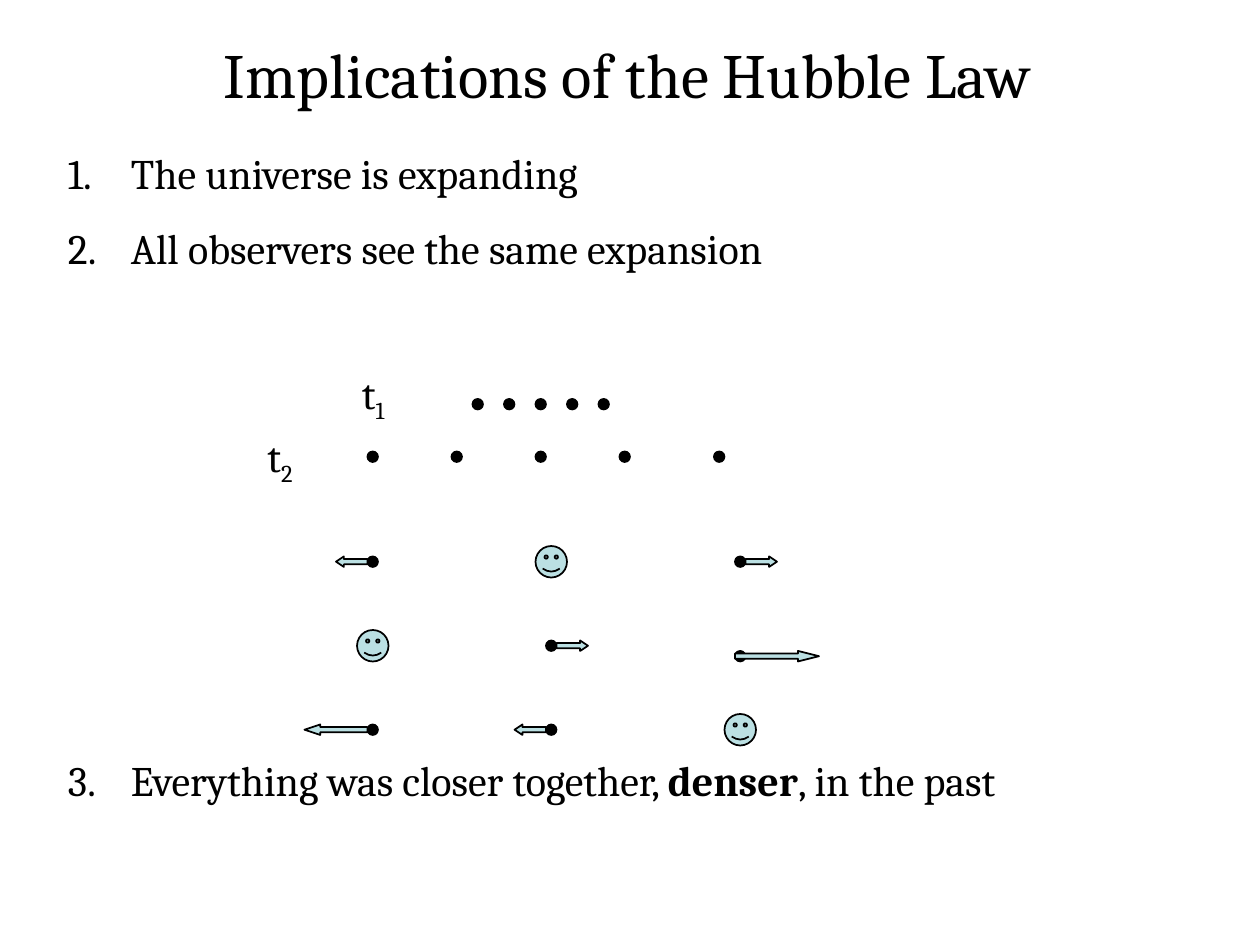
from dataclasses import dataclass

from lxml.etree import SubElement
from pptx import Presentation
from pptx.dml.color import RGBColor
from pptx.enum.shapes import MSO_SHAPE as Preset
from pptx.enum.text import MSO_ANCHOR as Anchor, MSO_AUTO_SIZE as AutoSize, PP_ALIGN as Align
from pptx.oxml.ns import qn
from pptx.util import Cm, Pt


@dataclass(frozen=True)
class Theme:
    """Fonts, sizes and colours of the slide."""
    font: str = "Cambria"
    title_size: int = 36
    body_size: int = 24
    paragraph_gap: float = 14.5
    line_width: int = 1
    ink: RGBColor = RGBColor(0x00, 0x00, 0x00)
    accent: RGBColor = RGBColor(0xBB, 0xE0, 0xE3)


def grid(count):
    """Return a length on a grid of twelve steps to the inch."""
    return Cm(count * 2.54 / 12)


def add_text(paragraph, text, *, font, size, color, bold=False, baseline=None):
    """Add a formatted run to a paragraph."""
    run = paragraph.add_run()
    run.text = text
    run.font.name = font
    run.font.size = Pt(size)
    run.font.color.rgb = color
    run.font.bold = bold
    if baseline is not None:
        run._r.get_or_add_rPr().set("baseline", str(baseline * 1000))


def set_indent(paragraph, left, first=0):
    """Set the left margin and first-line indent of a paragraph."""
    properties = paragraph._p.get_or_add_pPr()
    properties.set("marL", str(Cm(left)))
    properties.set("indent", str(Cm(first)))
    return properties


class SlideBuilder:
    """Holds the theme and the slide being built."""

    def __init__(self, slide, theme):
        """Keep the slide and its theme."""
        self.slide = slide
        self.theme = theme
        self.body_format = dict(font=theme.font, size=theme.body_size, color=theme.ink)

    def frame(self, shape, box, insets, anchor=Anchor.TOP):
        """Place a text shape and return its prepared text frame."""
        shape.left, shape.top, shape.width, shape.height = map(grid, box)
        frame = shape.text_frame
        frame.word_wrap = True
        frame.auto_size = AutoSize.NONE
        frame.vertical_anchor = anchor
        (frame.margin_left, frame.margin_top,
         frame.margin_right, frame.margin_bottom) = map(Cm, insets)
        return frame

    def title(self, text, box):
        """Fill the title placeholder."""
        frame = self.frame(self.slide.shapes.title, box, (0.15, 0.15, 0.35, 0.15), Anchor.MIDDLE)
        paragraph = frame.paragraphs[0]
        paragraph.alignment = Align.CENTER
        set_indent(paragraph, 0.1)
        add_text(paragraph, text, font=self.theme.font,
                 size=self.theme.title_size, color=self.theme.ink)

    def numbered_list(self, items, box):
        """Fill the body placeholder with (space before, runs) items."""
        frame = self.frame(self.slide.placeholders[1], box, (0, 0, 0.1, 0))
        for index, (space, runs) in enumerate(items):
            paragraph = frame.add_paragraph() if index else frame.paragraphs[0]
            paragraph.space_before = Pt(space)
            properties = set_indent(paragraph, 1.37, -1.27)
            SubElement(properties, qn("a:buFont")).set("typeface", self.theme.font)
            SubElement(properties, qn("a:buAutoNum")).set("type", "arabicPeriod")
            for text, bold in runs:
                add_text(paragraph, text, bold=bold, **self.body_format)

    def label(self, text, subscript, box):
        """Add a symbol with a subscript."""
        shape = self.slide.shapes.add_textbox(*map(grid, box))
        paragraph = self.frame(shape, box, (0, 0, 0.1, 0)).paragraphs[0]
        paragraph.space_before = Pt(self.theme.paragraph_gap)
        set_indent(paragraph, 0.1)
        add_text(paragraph, text, **self.body_format)
        add_text(paragraph, subscript, baseline=-25, **self.body_format)

    def shape(self, preset, box, fill):
        """Add an outlined preset shape."""
        shape = self.slide.shapes.add_shape(preset, *map(grid, box))
        shape.shadow.inherit = False
        shape.fill.solid()
        shape.fill.fore_color.rgb = fill
        shape.line.color.rgb = self.theme.ink
        shape.line.width = Pt(self.theme.line_width)
        return shape

    def galaxy(self, left, top):
        """Add a galaxy dot."""
        self.shape(Preset.OVAL, (left, top, 1, 1), self.theme.ink)

    def observer(self, left, top):
        """Add an observer's smiling face."""
        self.shape(Preset.SMILEY_FACE, (left, top, 3, 3), self.theme.accent)

    def velocity(self, preset, left, top, length):
        """Add a velocity arrow whose head is a quarter of its length."""
        arrow = self.shape(preset, (left, top, length, 1), self.theme.accent)
        arrow.adjustments[0] = 0.5
        arrow.adjustments[1] = length / 4


def main():
    """Build and save the slide."""
    presentation = Presentation()
    presentation.slide_width = Cm(25.4)
    presentation.slide_height = Cm(19.05)
    theme = Theme()
    slide = presentation.slides.add_slide(presentation.slide_layouts[1])
    builder = SlideBuilder(slide, theme)

    builder.title("Implications of the Hubble Law", (9, 0, 102, 14))
    diagram_gap = 275
    builder.numbered_list([
        (theme.paragraph_gap, [("The universe is expanding", False)]),
        (theme.paragraph_gap, [("All observers see the same expansion", False)]),
        (diagram_gap, [("Everything was closer together, ", False),
                       ("denser", True), (", in the past", False)]),
    ], (6, 14, 112, 64))

    galaxy_rows = [
        (38, range(45, 58, 3)),
        (43, (35, 43, 51, 59, 68)),
        (53, (35, 70)),
        (62, (70,)),
        (61, (52,)),
        (69, (35, 52)),
    ]
    for top, columns in galaxy_rows:
        for left in columns:
            builder.galaxy(left, top)

    for left, top in ((51, 52), (34, 60), (69, 68)):
        builder.observer(left, top)

    velocities = [
        (Preset.LEFT_ARROW, 32, 53, 3),
        (Preset.RIGHT_ARROW, 71, 53, 3),
        (Preset.RIGHT_ARROW, 53, 61, 3),
        (Preset.RIGHT_ARROW, 70, 62, 8),
        (Preset.LEFT_ARROW, 49, 69, 3),
        (Preset.LEFT_ARROW, 29, 69, 6),
    ]
    for velocity in velocities:
        builder.velocity(*velocity)

    builder.label("t", "1", (34, 35, 5, 7))
    builder.label("t", "2", (25, 41, 6, 7))
    presentation.save("out.pptx")


if __name__ == "__main__":
    main()
